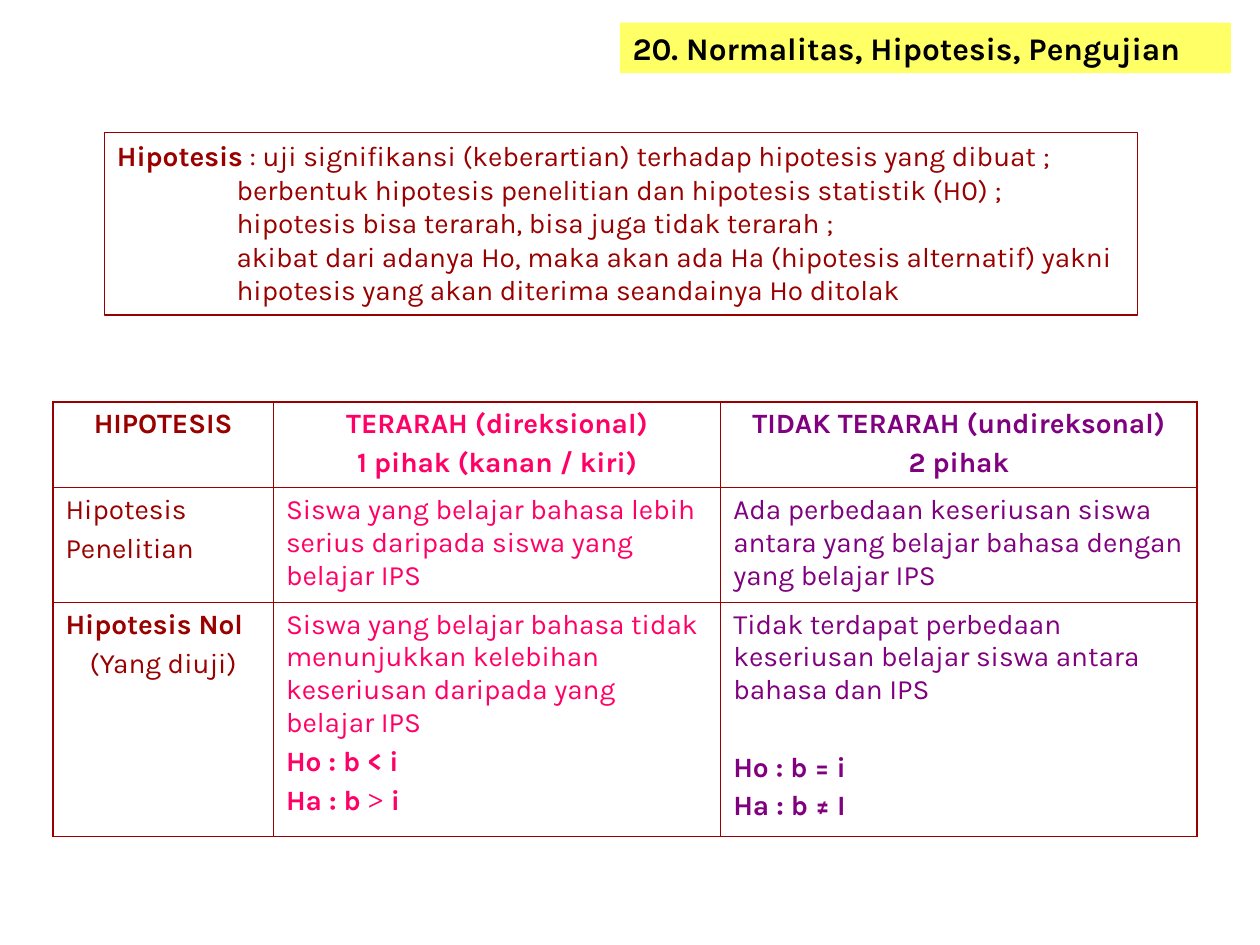
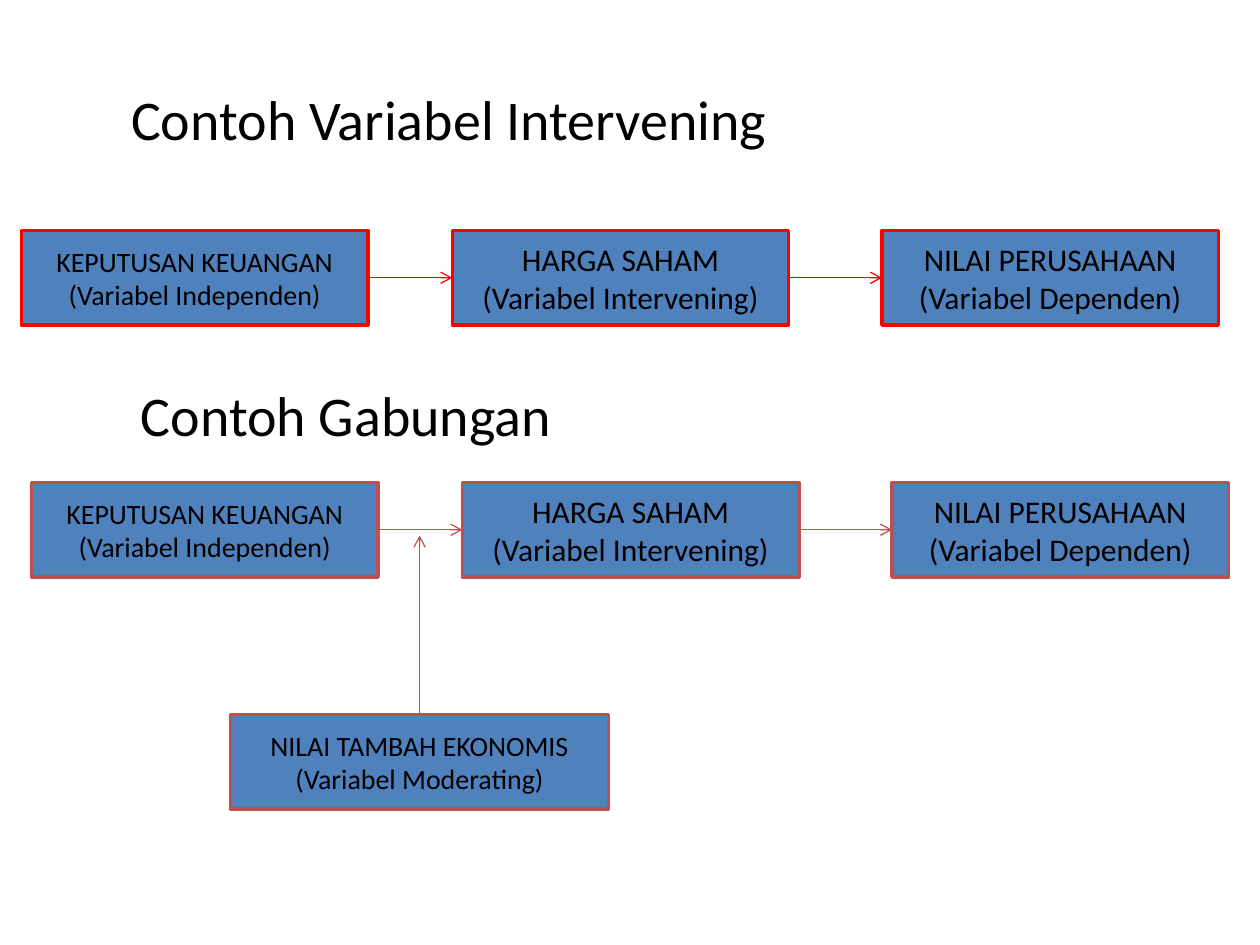
from dataclasses import dataclass

from lxml import etree
from pptx import Presentation
from pptx.dml.color import RGBColor
from pptx.enum.shapes import MSO_CONNECTOR, MSO_SHAPE
from pptx.enum.text import MSO_ANCHOR, MSO_AUTO_SIZE, PP_ALIGN
from pptx.oxml.ns import qn
from pptx.util import Inches, Pt

LEFT, CENTER = PP_ALIGN.LEFT, PP_ALIGN.CENTER
TOP, MIDDLE = MSO_ANCHOR.TOP, MSO_ANCHOR.MIDDLE
NO_AUTOFIT = MSO_AUTO_SIZE.NONE
RECTANGLE = MSO_SHAPE.RECTANGLE
STRAIGHT = MSO_CONNECTOR.STRAIGHT
SIDE_TOP, SIDE_LEFT, SIDE_RIGHT = 0, 1, 3
TITLE_ONLY = 5

KARLA, CALIBRI, TIMES = "Karla", "Calibri", "Times New Roman"
BLACK, YELLOW, MAROON = "000000", "FFFF66", "990000"
PINK, PURPLE, BLUE = "FF0066", "800080", "4F81BD"
RED, BRICK = "FF0000", "C0504D"
CELL_SPACING = 3.5


@dataclass
class Line:
    spans: tuple
    align: int = LEFT
    before: float = 0
    indent: float = 0


def plain(text, bold=False, **layout):
    return Line(((text, bold),), **layout)


def cell_line(text, bold=False, align=LEFT, before=CELL_SPACING):
    return plain(text, bold, align=align, before=before)


def heading(text):
    return cell_line(text, True, CENTER)


HYPOTHESIS_LINES = [
    Line((("Hipotesis", True),
          (" : uji signifikansi (keberartian) terhadap hipotesis yang dibuat ;", False))),
    *(plain(text, indent=0.95) for text in (
        "berbentuk hipotesis penelitian dan hipotesis statistik (H0) ;",
        "hipotesis bisa terarah, bisa juga tidak terarah ;",
        "akibat dari adanya Ho, maka akan ada Ha (hipotesis alternatif) yakni",
        "hipotesis yang akan diterima seandainya Ho ditolak",
    )),
]

COLUMN_WIDTHS = (1.75, 3.55, 3.78)
COLUMN_COLORS = (MAROON, PINK, PURPLE)
ROW_HEIGHTS = (0.68, 0.91, 1.86)
TABLE_ROWS = [
    [
        [heading("HIPOTESIS")],
        [heading("TERARAH (direksional)"), heading("1 pihak (kanan / kiri)")],
        [heading("TIDAK TERARAH (undireksonal)"), heading("2 pihak")],
    ],
    [
        [cell_line("Hipotesis"), cell_line("Penelitian")],
        [cell_line("Siswa yang belajar bahasa lebih serius daripada siswa yang belajar IPS")],
        [cell_line("Ada perbedaan keseriusan siswa antara yang belajar bahasa "
                   "dengan yang belajar IPS")],
    ],
    [
        [cell_line("Hipotesis Nol", True), cell_line("(Yang diuji)", align=CENTER)],
        [
            cell_line("Siswa yang belajar bahasa tidak menunjukkan kelebihan "
                      "keseriusan daripada yang belajar IPS"),
            cell_line("Ho : b < i", True),
            Line((("Ha : b ", True), (">", True, TIMES), (" i", True)), before=CELL_SPACING),
        ],
        [
            cell_line("Tidak terdapat perbedaan keseriusan belajar siswa antara bahasa dan IPS"),
            cell_line("Ho : b = i", True, before=25.5),
            cell_line("Ha : b ≠ I", True),
        ],
    ],
]

NODE_HEIGHT = 0.75
CHAIN_NODES = (
    (0, 2.75, 16, "KEPUTUSAN KEUANGAN", "(Variabel Independen)"),
    (3.42, 2.67, 18, "HARGA SAHAM", "(Variabel Intervening)"),
    (6.83, 2.67, 18, "NILAI PERUSAHAAN", "(Variabel Dependen)"),
)


def rgb(color):
    return RGBColor.from_string(color)


def inches(box):
    return [Inches(length) for length in box]


def write(frame, lines, size, font, color, anchor=TOP):
    frame.word_wrap = True
    frame.vertical_anchor = anchor
    for index, line in enumerate(lines):
        para = frame.paragraphs[0] if index == 0 else frame.add_paragraph()
        para.alignment = line.align
        para.space_before = Pt(line.before)
        if line.indent:
            para._p.get_or_add_pPr().set("marL", str(Inches(line.indent)))
        for text, bold, *other_font in line.spans:
            span = para.add_run()
            span.text = text
            span.font.name = other_font[0] if other_font else font
            span.font.size = Pt(size)
            span.font.bold = bold
            span.font.color.rgb = rgb(color)


def add_title(page, box, text, size, font, bold=False):
    title = page.shapes.title
    title.left, title.top, title.width, title.height = inches(box)
    write(title.text_frame, [plain(text, bold)], size, font, BLACK)
    title.text_frame.auto_size = NO_AUTOFIT
    return title


def add_box(page, box, line_color, line_width, fill=None):
    shape = page.shapes.add_shape(RECTANGLE, *inches(box))
    shape.shadow.inherit = False
    if fill:
        shape.fill.solid()
        shape.fill.fore_color.rgb = rgb(fill)
    else:
        shape.fill.background()
    shape.line.color.rgb = rgb(line_color)
    shape.line.width = Pt(line_width)
    return shape


def add_node(page, box, size, name, role, color):
    node = add_box(page, box, color, 2, BLUE)
    lines = [plain(text, align=CENTER) for text in (name, role)]
    write(node.text_frame, lines, size, CALIBRI, BLACK, MIDDLE)
    return node


def add_arrow(page, source, side, color, target=None, end=(0, 0)):
    arrow = page.shapes.add_connector(STRAIGHT, 0, 0, *end)
    arrow.begin_connect(source, side)
    if target is not None:
        arrow.end_connect(target, SIDE_LEFT)
    arrow.line.color.rgb = rgb(color)
    arrow.line.width = Pt(0.75)
    etree.SubElement(arrow.line._get_or_add_ln(), qn("a:tailEnd"), type="arrow")
    etree.SubElement(arrow._element.spPr, qn("a:effectLst"))


def border_cell(cell, color, width):
    properties = cell._tc.get_or_add_tcPr()
    for index, side in enumerate(("lnL", "lnR", "lnT", "lnB")):
        border = etree.Element(qn(f"a:{side}"), w=str(Pt(width)))
        fill = etree.SubElement(border, qn("a:solidFill"))
        etree.SubElement(fill, qn("a:srgbClr"), val=color)
        properties.insert(index, border)


def add_hypothesis_table(page, left, top):
    box = (left, top, sum(COLUMN_WIDTHS), sum(ROW_HEIGHTS))
    table = page.shapes.add_table(len(ROW_HEIGHTS), len(COLUMN_WIDTHS), *inches(box)).table
    table.first_row = table.horz_banding = False
    for column, width in zip(table.columns, COLUMN_WIDTHS):
        column.width = Inches(width)
    for row, height, contents in zip(table.rows, ROW_HEIGHTS, TABLE_ROWS):
        row.height = Inches(height)
        for cell, lines, color in zip(row.cells, contents, COLUMN_COLORS):
            cell.fill.background()
            border_cell(cell, MAROON, 1)
            write(cell.text_frame, lines, 16, KARLA, color)


def add_chain(page, left, top, color):
    nodes = [
        add_node(page, (left + offset, top, width, NODE_HEIGHT), size, name, role, color)
        for offset, width, size, name, role in CHAIN_NODES
    ]
    for source, target in zip(nodes, nodes[1:]):
        add_arrow(page, source, SIDE_RIGHT, color, target)
    return nodes


def add_moderator(page, box, color, arrow_tip):
    node = add_node(page, box, 16, "NILAI TAMBAH EKONOMIS", "(Variabel Moderating)", color)
    add_arrow(page, node, SIDE_TOP, color, end=inches(arrow_tip))


def build_hypothesis_slide(page):
    title = add_title(page, (4.92, 0.18, 4.85, 0.4),
                      "20. Normalitas, Hipotesis, Pengujian", 18, KARLA, True)
    title.fill.solid()
    title.fill.fore_color.rgb = rgb(YELLOW)
    add_hypothesis_table(page, 0.42, 3.19)
    definition = add_box(page, (0.83, 1.05, 8.2, 1.45), MAROON, 0.75)
    write(definition.text_frame, HYPOTHESIS_LINES, 16, KARLA, MAROON)


def build_variable_slide(page):
    add_title(page, (0.94, 0.62, 8.06, 0.67), "Contoh Variabel Intervening", 32, CALIBRI)
    add_chain(page, 0.17, 1.83, RED)
    subtitle = page.shapes.add_textbox(*inches((1.02, 2.97, 8.23, 0.45)))
    write(subtitle.text_frame, [plain("Contoh Gabungan")], 32, CALIBRI, BLACK)
    add_chain(page, 0.25, 3.83, BRICK)
    add_moderator(page, (1.83, 5.67, 3, NODE_HEIGHT), BRICK, (3.33, 4.25))


def main():
    deck = Presentation()
    deck.slide_width, deck.slide_height = Inches(10), Inches(7.5)
    for build in (build_hypothesis_slide, build_variable_slide):
        build(deck.slides.add_slide(deck.slide_layouts[TITLE_ONLY]))
    deck.save("out.pptx")


if __name__ == "__main__":
    main()
